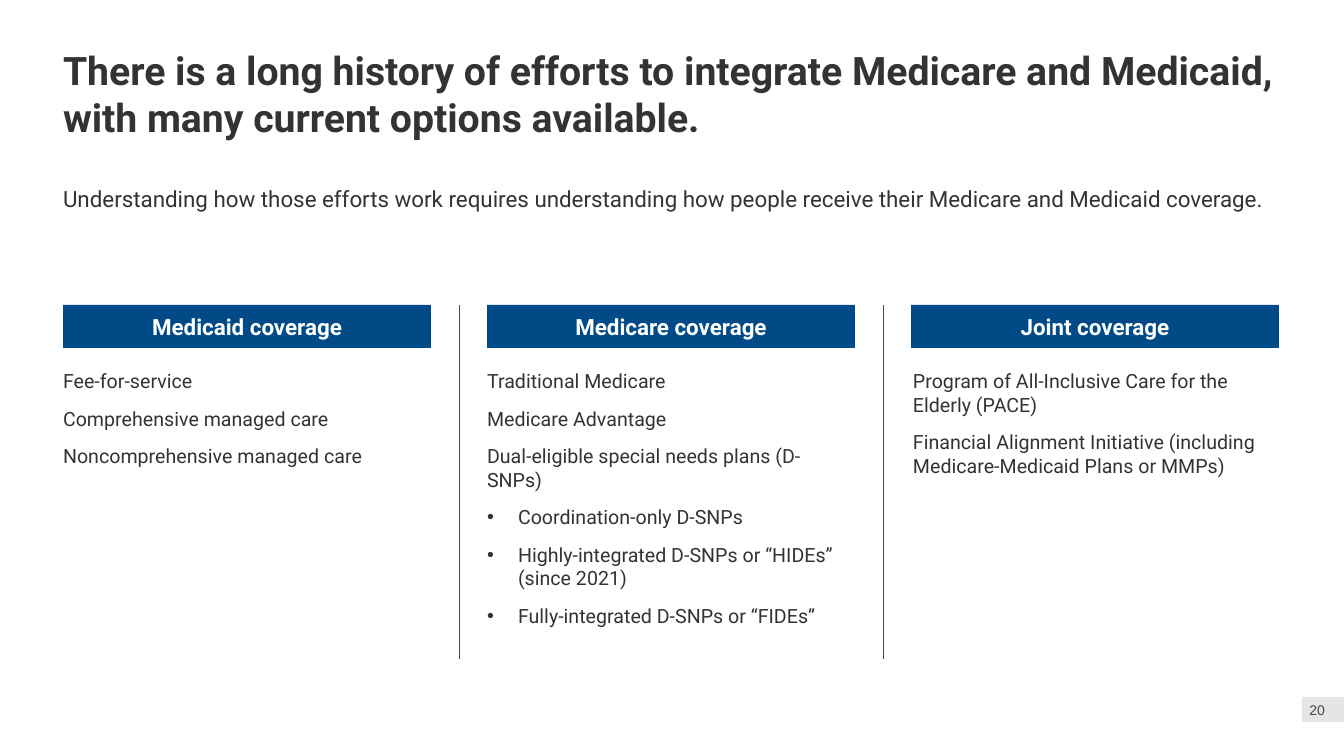
from lxml import etree
from pptx import Presentation, util as u
from pptx.dml.color import RGBColor
from pptx.enum import shapes, text
from pptx.oxml import ns

# Content
TITLE = ("There is a long history of efforts to integrate Medicare and Medicaid, "
         "with many current options available.")
INTRO = ("Understanding how those efforts work requires understanding how people "
         "receive their Medicare and Medicaid coverage.")
# Each column: heading, plain lines, bulleted lines, left shift of its list
COLUMNS = [
    ("Medicaid coverage",
     ["Fee-for-service", "Comprehensive managed care", "Noncomprehensive managed care"],
     [], 0),
    ("Medicare coverage",
     ["Traditional Medicare", "Medicare Advantage",
      "Dual-eligible special needs plans (D-SNPs)"],
     ["Coordination-only D-SNPs", "Highly-integrated D-SNPs or “HIDEs” (since 2021)",
      "Fully-integrated D-SNPs or “FIDEs”"], 0),
    ("Joint coverage",
     ["Program of All-Inclusive Care for the Elderly (PACE)",
      "Financial Alignment Initiative (including Medicare-Medicaid Plans or MMPs)"],
     [], 2),
]
PAGE_NUMBER = "20"

COLORS = {"text": "333333", "navy": "004B87", "white": "FFFFFF",
          "rule": "474747", "tab": "E5E5E5"}

# Layout in px
PX_PER_INCH = 100.8
LEFT, WIDTH = 63, 1217
COLUMN_WIDTH, COLUMN_STEP = 368, 424
TOP, HEADING_HEIGHT, LIST_TOP, BOTTOM = 305, 43, 369, 659
INDENT = 31


def px(length):
    return u.Inches(length / PX_PER_INCH)


def color(name):
    return RGBColor.from_string(COLORS[name])


def place(box, left, top, width, height):
    box.left, box.top, box.width, box.height = map(px, (left, top, width, height))


def add_block(left, top, width, height, fill):
    block = page.shapes.add_shape(shapes.MSO_SHAPE.RECTANGLE,
                                  *map(px, (left, top, width, height)))
    block.shadow.inherit = False
    block.fill.solid()
    block.fill.fore_color.rgb = color(fill)
    block.line.fill.background()
    return block


def write(box, lines, bullets=(), size=14, font="Roboto", ink="text", bold=False,
          align=text.PP_ALIGN.LEFT, anchor=text.MSO_ANCHOR.TOP):
    frame = box.text_frame
    frame.word_wrap = True
    frame.auto_size = text.MSO_AUTO_SIZE.NONE
    frame.vertical_anchor = anchor
    frame.margin_left = frame.margin_right = frame.margin_top = frame.margin_bottom = 0
    for index, line in enumerate([*lines, *bullets]):
        para = frame.paragraphs[0] if index == 0 else frame.add_paragraph()
        para.alignment = align
        para.space_before = u.Pt(10 if index else 0)
        bulleted = index >= len(lines)
        props = para._p.get_or_add_pPr()
        props.set("marL", str(px(INDENT) if bulleted else 0))
        props.set("indent", str(-px(INDENT) if bulleted else 0))
        if bulleted:
            etree.SubElement(props, ns.qn("a:buFont")).set("typeface", "Arial")
            etree.SubElement(props, ns.qn("a:buChar")).set("char", "•")
        else:
            etree.SubElement(props, ns.qn("a:buNone"))
        span = para.add_run()
        span.text = line
        span.font.name, span.font.size, span.font.bold = font, u.Pt(size), bold
        span.font.color.rgb = color(ink)


deck = Presentation()
deck.slide_width, deck.slide_height = px(1344), px(756)
page = deck.slides.add_slide(deck.slide_layouts.get_by_name("Comparison"))
title, intro, *lists = page.placeholders

# Title and introduction
place(title, LEFT, 46, WIDTH, 101)
write(title, [TITLE], size=28, bold=True)
place(intro, LEFT, 185, WIDTH, 82)
write(intro, [INTRO], size=16)

# Columns, with a rule in each gap
for number, (heading, lines, bullets, shift) in enumerate(COLUMNS):
    left = LEFT + number * COLUMN_STEP
    banner = add_block(left, TOP, COLUMN_WIDTH, HEADING_HEIGHT, "navy")
    write(banner, [heading], size=16, ink="white", bold=True,
          align=text.PP_ALIGN.CENTER, anchor=text.MSO_ANCHOR.MIDDLE)
    place(lists[number], left + shift, LIST_TOP, COLUMN_WIDTH, BOTTOM - LIST_TOP)
    write(lists[number], lines, bullets)
    if number:
        middle = px(left - (COLUMN_STEP - COLUMN_WIDTH) // 2)
        rule = page.shapes.add_connector(shapes.MSO_CONNECTOR.STRAIGHT,
                                         middle, px(TOP), middle, px(BOTTOM))
        rule.line.color.rgb = color("rule")
        rule.line.width = u.Pt(0.5)
        etree.SubElement(rule._element.spPr, ns.qn("a:effectLst"))

# Page number
add_block(1302, 697, 42, 25, "tab")
number_box = page.shapes.add_textbox(*map(px, (1302, 697, 23, 25)))
write(number_box, [PAGE_NUMBER], size=10, font="Arial", ink="rule",
      align=text.PP_ALIGN.RIGHT, anchor=text.MSO_ANCHOR.MIDDLE)

deck.save("out.pptx")
